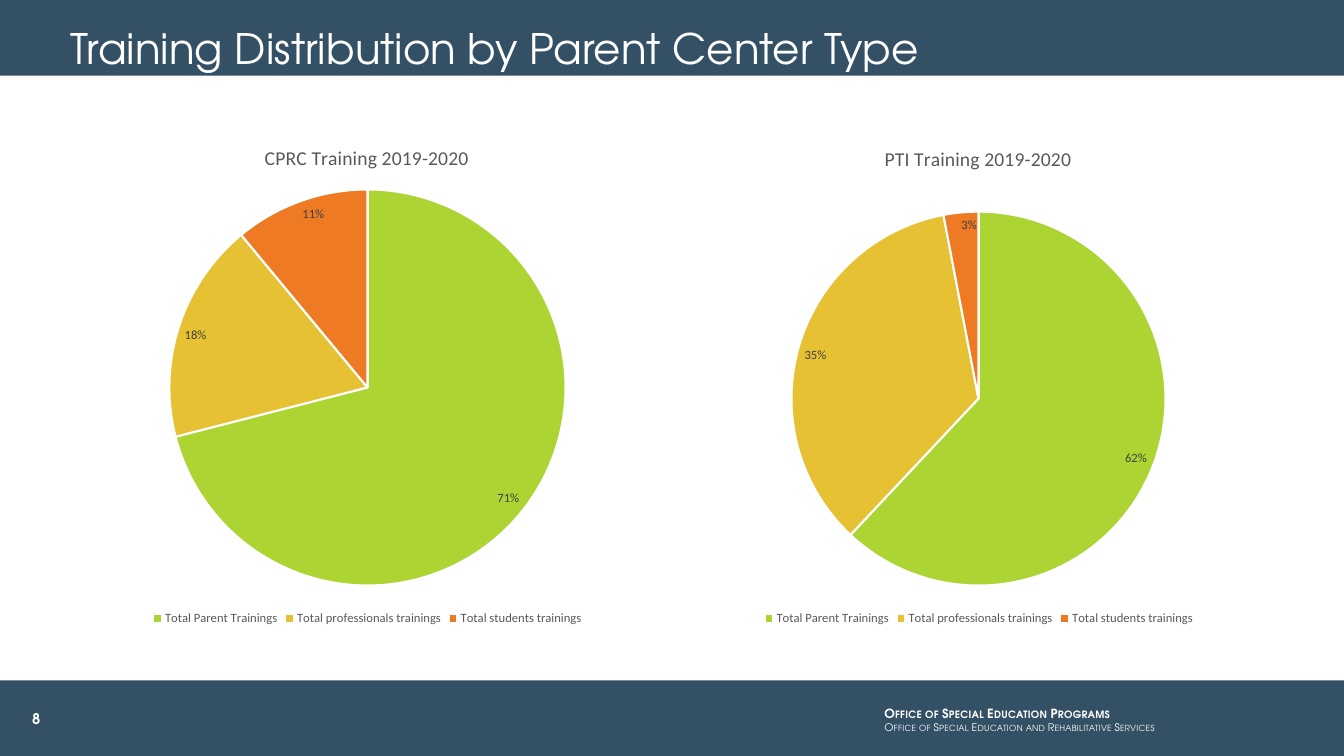
from dataclasses import dataclass

import lxml.etree
import pptx
import pptx.chart.data
import pptx.dml.color
import pptx.enum.chart
import pptx.enum.shapes
import pptx.enum.text
import pptx.oxml
import pptx.oxml.ns
import pptx.util

Inches = pptx.util.Inches
Anchor = pptx.enum.text.MSO_ANCHOR
Align = pptx.enum.text.PP_ALIGN
qn = pptx.oxml.ns.qn


@dataclass(frozen=True)
class Theme:
    band: str = "345065"
    white: str = "FFFFFF"
    black: str = "000000"
    legend: str = "595959"
    label: str = "404040"
    slices: tuple = ("ACD433", "E6C133", "EF7A24")
    display_font: str = "TeX Gyre Adventor"
    chart_font: str = "Calibri"
    title_size: float = 30
    chart_title_size: float = 14
    number_size: float = 10.5
    chart_size: float = 10
    small_size: float = 9
    tagline_size: float = 7.5
    slice_line: float = 1.5


def color(value):
    return pptx.dml.color.RGBColor.from_string(value)


def apply_format(target, values):
    for name, value in values.items():
        setattr(target, name, value)


class SlideBuilder:
    def __init__(self, page, theme):
        self.page = page
        self.theme = theme

    def style_font(self, font, size, fill, name, **extra):
        apply_format(font, {"size": pptx.util.Pt(size), "name": name, **extra})
        font.color.rgb = color(fill)

    def band(self, top):
        box = self.page.shapes.add_shape(
            pptx.enum.shapes.MSO_SHAPE.RECTANGLE,
            Inches(0), Inches(top), Inches(13.33), Inches(0.75))
        box.shadow.inherit = False
        box.fill.solid()
        box.fill.fore_color.rgb = color(self.theme.band)
        box.line.fill.background()

    def text(self, place, lines, anchor=Anchor.MIDDLE, align=Align.LEFT,
             spacing=1.0, insets=(0, 0), small_caps=False):
        box = self.page.shapes.add_textbox(*map(Inches, place))
        frame = box.text_frame
        side, end = map(Inches, insets)
        apply_format(frame, {
            "word_wrap": True, "vertical_anchor": anchor,
            "margin_left": side, "margin_right": side,
            "margin_top": end, "margin_bottom": end})
        for index, (content, size, bold) in enumerate(lines):
            para = frame.add_paragraph() if index else frame.paragraphs[0]
            apply_format(para, {"alignment": align, "line_spacing": spacing})
            span = para.add_run()
            span.text = content
            self.style_font(span.font, size, self.theme.white,
                            self.theme.display_font, bold=bold)
            if small_caps:
                properties = span.font._element
                properties.set("cap", "small")
                properties.set("spc", "20")

    def layout(self, parent, index, values, inner=False):
        for old in parent.findall(qn("c:layout")):
            parent.remove(old)
        layout = pptx.oxml.parse_xml(
            f'<c:layout {pptx.oxml.ns.nsdecls("c")}><c:manualLayout/></c:layout>')
        settings = {"layoutTarget": "inner"} if inner else {}
        settings.update(xMode="edge", yMode="edge", **values)
        for name, value in settings.items():
            lxml.etree.SubElement(layout[0], qn(f"c:{name}")).set("val", str(value))
        parent.insert(index, layout)

    def pie(self, place, title, title_at, pie_at, diameter, categories, shares):
        theme = self.theme
        left, top, width, height = place
        data = pptx.chart.data.CategoryChartData()
        data.categories = categories
        data.add_series("Series 1", shares)
        chart = self.page.shapes.add_chart(
            pptx.enum.chart.XL_CHART_TYPE.PIE, *map(Inches, place), data).chart
        self.style_font(chart.font, theme.chart_size, theme.black, theme.chart_font)

        chart.has_title = True
        span = chart.chart_title.text_frame.paragraphs[0].add_run()
        span.text = title
        self.style_font(span.font, theme.chart_title_size, theme.legend,
                        theme.chart_font, bold=False)

        def fractions(point):
            return {"x": round((point[0] - left) / width, 4),
                    "y": round((point[1] - top) / height, 4)}

        self.layout(chart.chart_title._element, 1, fractions(title_at))
        extent = {"w": round(diameter / width, 4), "h": round(diameter / height, 4)}
        self.layout(chart._chartSpace.chart.plotArea, 0,
                    {**fractions(pie_at), **extent}, inner=True)

        chart.has_legend = True
        apply_format(chart.legend, {
            "position": pptx.enum.chart.XL_LEGEND_POSITION.BOTTOM,
            "include_in_layout": False})
        self.style_font(chart.legend.font, theme.small_size, theme.legend,
                        theme.chart_font)

        plot = chart.plots[0]
        plot.vary_by_categories = True
        for index, fill in enumerate(theme.slices):
            piece = plot.series[0].points[index].format
            piece.fill.solid()
            piece.fill.fore_color.rgb = color(fill)
            piece.line.color.rgb = color(theme.white)
            piece.line.width = pptx.util.Pt(theme.slice_line)
        labels = plot.series[0].data_labels
        apply_format(labels, {
            "show_percentage": True, "show_value": False,
            "number_format": "0%", "number_format_is_linked": False,
            "position": pptx.enum.chart.XL_LABEL_POSITION.INSIDE_END})
        self.style_font(labels.font, theme.small_size, theme.label, theme.chart_font)


def main():
    deck = pptx.Presentation()
    apply_format(deck, {"slide_width": Inches(13.33), "slide_height": Inches(7.5)})
    theme = Theme()
    slide = SlideBuilder(deck.slides.add_slide(deck.slide_layouts[6]), theme)

    for top in (0, 6.75):
        slide.band(top)
    slide.text((8.72, 6.94, 3.69, 0.4), [
        ("Office of Special Education Programs", theme.small_size, True),
        ("Office of Special Education and Rehabilitative Services",
         theme.tagline_size, False),
    ], insets=(0.05, 0), small_caps=True)
    slide.text((0, 6.75, 0.72, 0.75), [("8", theme.number_size, True)],
               align=Align.CENTER, insets=(0.07, 0.04))
    slide.text((0.7, 0, 11.97, 0.73),
               [("Training Distribution by Parent Center Type",
                 theme.title_size, False)],
               anchor=Anchor.BOTTOM, spacing=0.9)

    categories = ("Total Parent Trainings", "Total professionals trainings",
                  "Total students trainings")
    slide.pie((0.7, 1.25, 5.89, 5), "CPRC Training 2019-2020",
              (2.59, 1.4), (1.68, 1.88), 3.93, categories, (71, 18, 11))
    slide.pie((6.75, 1.25, 5.92, 5), "PTI Training 2019-2020",
              (8.74, 1.41), (7.85, 2.1), 3.71, categories, (62, 35, 3))
    deck.save("out.pptx")


if __name__ == "__main__":
    main()
